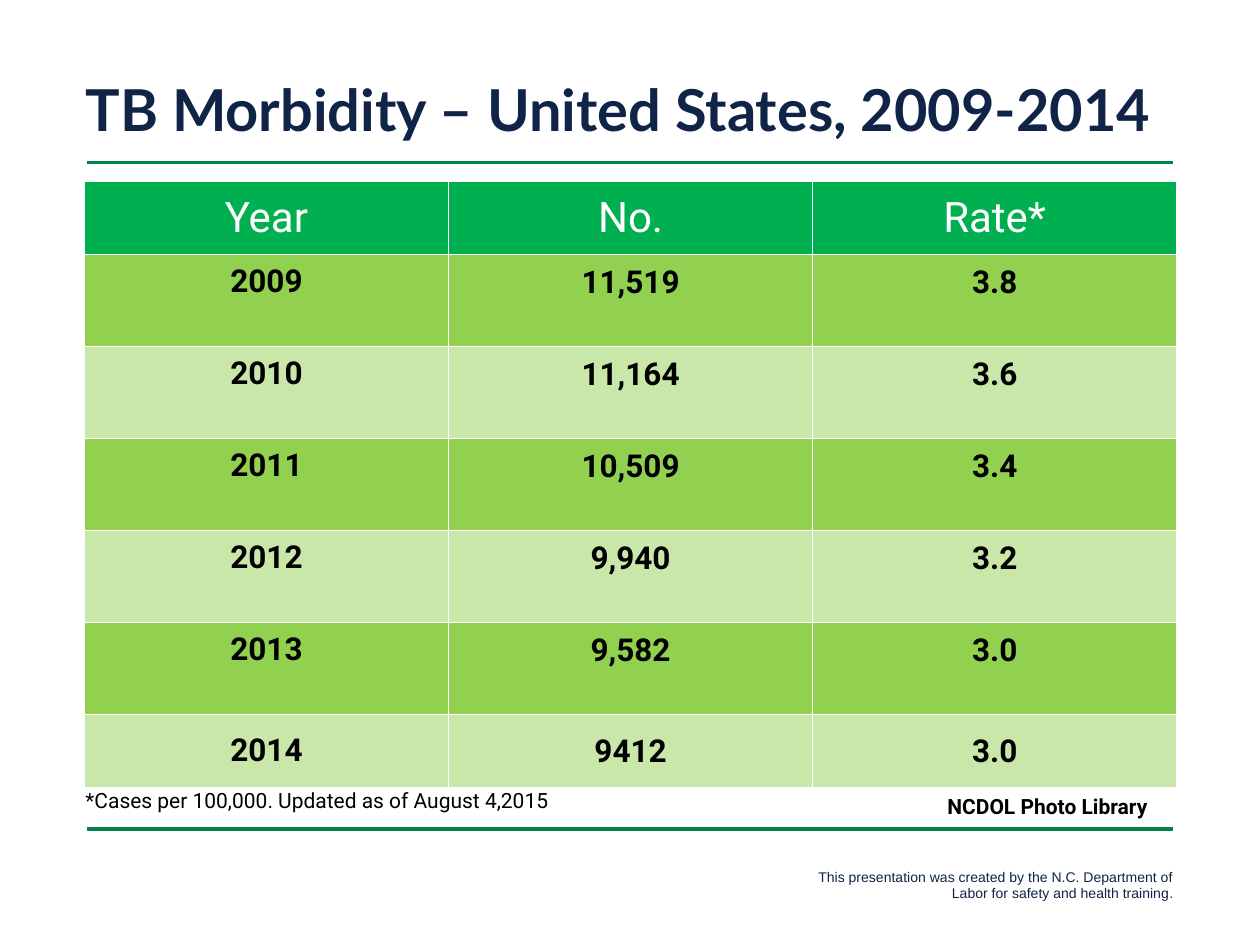
from lxml import etree
from pptx import Presentation
from pptx import util as u
from pptx.dml.color import RGBColor
from pptx.enum import shapes, text
from pptx.oxml.ns import qn

# Content
TITLE = "TB Morbidity – United States, 2009-2014"
HEAD = ("Year", "No.", "Rate*")
DATA = [
    ("2009", "11,519", "3.8"),
    ("2010", "11,164", "3.6"),
    ("2011", "10,509", "3.4"),
    ("2012", "9,940", "3.2"),
    ("2013", "9,582", "3.0"),
    ("2014", "9412", "3.0"),
]
NOTE = "*Cases per 100,000. Updated as of August 4,2015"
SOURCE = "NCDOL Photo Library"
CREDIT = ("This presentation was created by the N.C. Department of "
          "Labor for safety and health training", ".")

# Style
NAVY, RULE, GREEN, LIME = "102447", "00814A", "00B050", "92D050"
WHITE, BLACK = "FFFFFF", "000000"
LEFT, RIGHT, MID = text.PP_ALIGN.LEFT, text.PP_ALIGN.RIGHT, text.PP_ALIGN.CENTER
ENDS = (0.58, 0.58)           # heights of the first and last table rows
BODY = 0.73                   # height of the rows between
LIFT = 0.29                   # extra bottom margin in those rows


def color(code):
    return RGBColor.from_string(code)


def style(para, face, size, code, bold=False, align=LEFT):
    para.alignment = align
    for run in para.runs:
        font = run.font
        font.name, font.size, font.bold = face, u.Pt(size), bold
        font.color.rgb = color(code)


def add_text(slide, box, words, *look):
    frame = slide.shapes.add_textbox(*map(u.Inches, box)).text_frame
    frame.word_wrap = True
    frame.text = words
    para = frame.paragraphs[0]
    style(para, *look)
    return frame, para


def add_rule(slide, top):
    line = slide.shapes.add_connector(
        shapes.MSO_CONNECTOR.STRAIGHT,
        *map(u.Inches, (0.69, top, 9.31, top)))
    line.line.color.rgb = color(RULE)
    line.line.width = u.Pt(2)
    etree.SubElement(line._element.spPr, qn("a:effectLst"))


def fill_cell(cell, code, alpha=None):
    props = cell._tc.get_or_add_tcPr()
    # White borders go ahead of the fill
    for side in ("a:lnL", "a:lnR", "a:lnT", "a:lnB"):
        edge = etree.SubElement(props, qn(side), w=str(u.Pt(1)))
        paint = etree.SubElement(edge, qn("a:solidFill"))
        etree.SubElement(paint, qn("a:srgbClr"), val=WHITE)
    cell.fill.solid()
    cell.fill.fore_color.rgb = color(code)
    if alpha:
        shade = props.find(qn("a:solidFill")).find(qn("a:srgbClr"))
        etree.SubElement(shade, qn("a:alpha"), val=str(alpha * 1000))


def add_grid(slide):
    rows = [HEAD, *DATA]
    last = len(rows) - 1
    highs = [ENDS[0]] + [BODY] * (last - 1) + [ENDS[1]]
    grid = slide.shapes.add_table(
        len(rows), len(HEAD),
        *map(u.Inches, (0.67, 1.44, 8.67, sum(highs)))).table
    for col in grid.columns:
        col.width = u.Inches(2.89)
    for r, (row, high) in enumerate(zip(rows, highs)):
        grid.rows[r].height = u.Inches(high)
        for c, words in enumerate(row):
            cell = grid.cell(r, c)
            wide = r == 0 or c == 0
            side, top, low = (0.1, 0.05, 0.05) if wide else (0.01, 0.01, 0)
            if 0 < r < last:
                low += LIFT
            cell.margin_left = cell.margin_right = u.Inches(side)
            cell.margin_top, cell.margin_bottom = u.Inches(top), u.Inches(low)
            cell.vertical_anchor = text.MSO_ANCHOR.MIDDLE
            cell.text_frame.text = words
            para = cell.text_frame.paragraphs[0]
            if r == 0:
                style(para, "Roboto", 24, WHITE, False, MID)
                fill_cell(cell, GREEN)
            else:
                style(para, "Roboto", 18, BLACK, True, MID)
                fill_cell(cell, LIME, None if r % 2 else 49)


def main():
    deck = Presentation()
    deck.slide_width, deck.slide_height = u.Inches(10), u.Inches(7.5)
    slide = deck.slides.add_slide(deck.slide_layouts[6])

    # Rules and credit line
    for top in (1.29, 6.58):
        add_rule(slide, top)
    frame, para = add_text(slide, (6.16, 6.84, 3.25, 0.37), CREDIT[0],
                           "Arial", 8, NAVY, False, RIGHT)
    para.add_run().text = CREDIT[1]
    style(para, "Arial", 8, NAVY, False, RIGHT)
    para.runs[1].font.color.rgb = color("2B0E62")

    # Title
    frame, para = add_text(slide, (0.58, 0.5, 9.25, 0.69), TITLE,
                           "Lato", 33, NAVY, True)
    frame.vertical_anchor = text.MSO_ANCHOR.MIDDLE
    para.line_spacing = u.Pt(42)

    # Table and the notes below it
    add_grid(slide)
    frame, para = add_text(slide, (0.58, 6.22, 4.17, 0.67), NOTE,
                           "Roboto", 12, BLACK)
    para.line_spacing = 0.9
    add_text(slide, (7.42, 6.25, 2.08, 0.3), SOURCE,
             "Roboto", 12, BLACK, True)

    deck.save("out.pptx")


if __name__ == "__main__":
    main()
